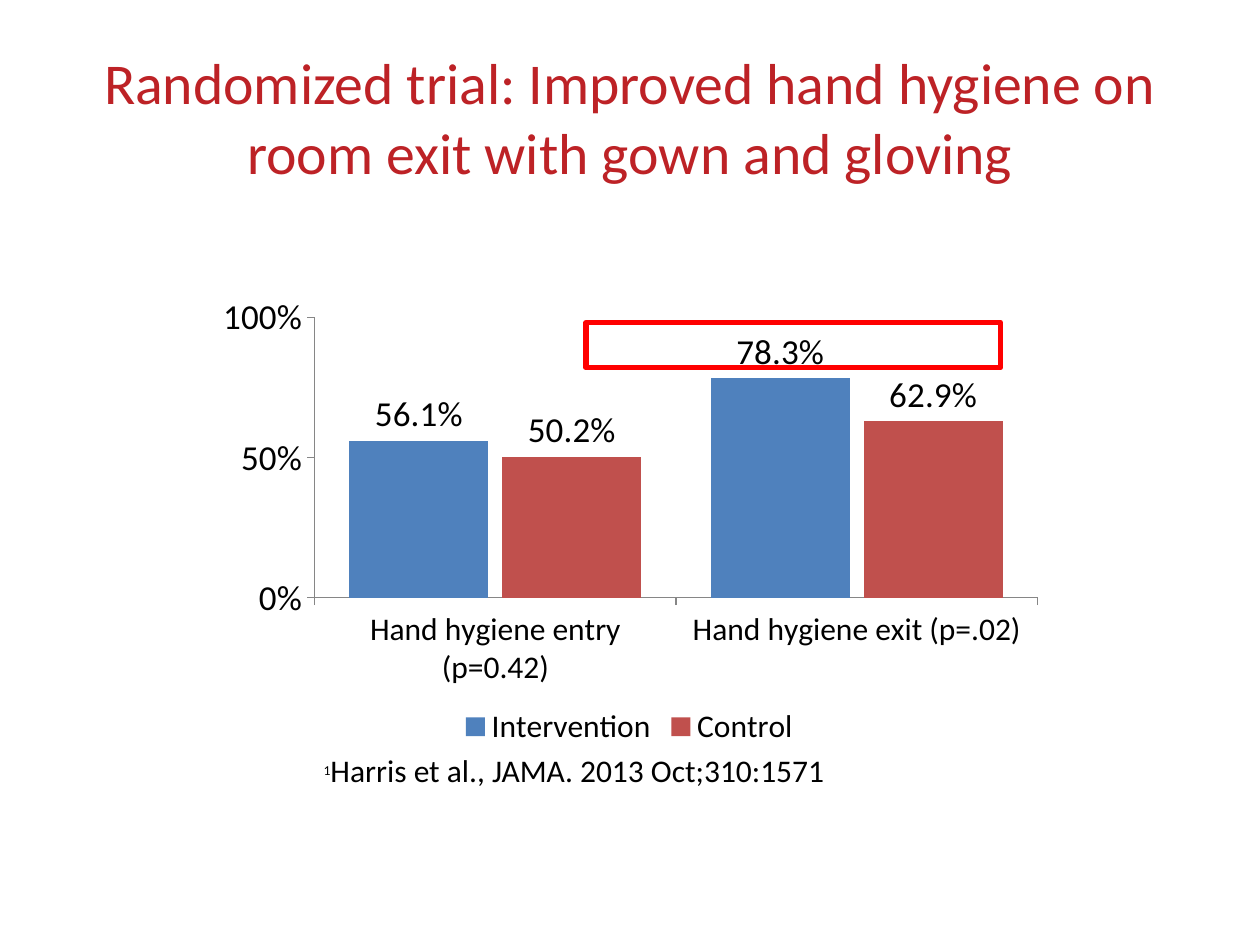
from dataclasses import dataclass

from lxml.etree import SubElement
from pptx import Presentation
from pptx.chart.data import CategoryChartData
from pptx.dml.color import RGBColor
from pptx.enum.chart import XL_CHART_TYPE as ChartType
from pptx.enum.chart import XL_LABEL_POSITION as LabelPosition
from pptx.enum.chart import XL_LEGEND_POSITION as LegendPosition
from pptx.enum.chart import XL_TICK_MARK as TickMark
from pptx.enum.shapes import MSO_SHAPE as ShapeKind
from pptx.enum.text import MSO_ANCHOR as Anchor
from pptx.enum.text import MSO_AUTO_SIZE as AutoSize
from pptx.enum.text import PP_ALIGN as Align
from pptx.oxml.ns import qn
from pptx.util import Inches, Pt

SLIDE_WIDTH, SLIDE_HEIGHT = Inches(10), Inches(7.5)
FONT = "Calibri"
BLACK, AXIS_GRAY = "000000", "868686"


@dataclass(frozen=True)
class Box:
    left: float
    top: float
    width: float
    height: float

    def lengths(self) -> tuple:
        return (
            int(self.left * SLIDE_WIDTH),
            int(self.top * SLIDE_HEIGHT),
            int(self.width * SLIDE_WIDTH),
            int(self.height * SLIDE_HEIGHT),
        )


@dataclass(frozen=True)
class Arm:
    name: str
    rates: tuple
    color: str


TITLE_BOX = Box(0.05, 0.04, 0.9, 1.25 / 7.5)
CHART_BOX = Box(0.162, 2.26 / 7.5, 0.675, 3.71 / 7.5)
HIGHLIGHT_BOX = Box(0.465, 2.56 / 7.5, 0.329, 0.36 / 7.5)
CITATION_BOX = Box(0.247, 5.97 / 7.5, 0.506, 0.34 / 7.5)
PLOT_SHARES = {"x": 0.13, "y": 0.07, "w": 0.85, "h": 0.6}

OUTCOMES = ("Hand hygiene entry (p=0.42)", "Hand hygiene exit (p=.02)")
ARMS = (
    Arm("Intervention", (0.561, 0.783), "4F81BD"),
    Arm("Control", (0.502, 0.629), "C0504D"),
)


def rgb(color: str) -> RGBColor:
    return RGBColor.from_string(color)


def style_font(font, size: float, color: str = BLACK) -> None:
    font.name = FONT
    font.size = Pt(size)
    font.color.rgb = rgb(color)


def add_run(paragraph, text: str, size: float, color: str = BLACK):
    run = paragraph.add_run()
    run.text = text
    style_font(run.font, size, color)
    return run


def place(shape, box: Box) -> None:
    shape.left, shape.top, shape.width, shape.height = box.lengths()


def fill_title(slide) -> None:
    title = slide.shapes.title
    place(title, TITLE_BOX)
    frame = title.text_frame
    frame.auto_size = AutoSize.NONE
    frame.vertical_anchor = Anchor.MIDDLE
    paragraph = frame.paragraphs[0]
    paragraph.alignment = Align.CENTER
    add_run(
        paragraph,
        "Randomized trial: Improved hand hygiene on room exit with gown and gloving",
        33,
        "BD2226",
    )


def fix_plot_area(chart) -> None:
    plot_area = chart.plots[0]._element.getparent()
    for old_layout in plot_area.findall(qn("c:layout")):
        plot_area.remove(old_layout)
    layout = SubElement(plot_area, qn("c:layout"))
    plot_area.insert(0, layout)
    manual = SubElement(layout, qn("c:manualLayout"))
    settings = {"layoutTarget": "inner", "xMode": "edge", "yMode": "edge", **PLOT_SHARES}
    for tag, value in settings.items():
        SubElement(manual, qn(f"c:{tag}")).set("val", str(value))


def style_axis(axis, size: float) -> None:
    axis.has_major_gridlines = False
    axis.major_tick_mark = TickMark.OUTSIDE
    axis.minor_tick_mark = TickMark.NONE
    axis.format.line.color.rgb = rgb(AXIS_GRAY)
    axis.format.line.width = Pt(0.75)
    style_font(axis.tick_labels.font, size)


def style_series(series, arm: Arm) -> None:
    series.smooth = False if hasattr(series, "smooth") else None
    series.format.fill.solid()
    series.format.fill.fore_color.rgb = rgb(arm.color)
    labels = series.data_labels
    labels.show_value = True
    labels.number_format = "0.0%"
    labels.number_format_is_linked = False
    labels.position = LabelPosition.OUTSIDE_END
    style_font(labels.font, 20)


def add_hygiene_chart(slide) -> None:
    data = CategoryChartData(number_format="0.0%")
    data.categories = OUTCOMES
    for arm in ARMS:
        data.add_series(arm.name, arm.rates)
    chart = slide.shapes.add_chart(
        ChartType.COLUMN_CLUSTERED, *CHART_BOX.lengths(), data
    ).chart
    style_font(chart.font, 18)
    chart.has_title = False
    chart.has_legend = True
    chart.legend.position = LegendPosition.BOTTOM
    chart.legend.include_in_layout = False
    style_font(chart.legend.font, 18)
    style_axis(chart.category_axis, 18)
    rate_axis = chart.value_axis
    style_axis(rate_axis, 20)
    rate_axis.minimum_scale, rate_axis.maximum_scale = 0, 1
    rate_axis.major_unit = 0.5
    rate_axis.tick_labels.number_format = "0%"
    rate_axis.tick_labels.number_format_is_linked = False
    plot = chart.plots[0]
    plot.vary_by_categories = False
    plot.gap_width, plot.overlap = 50, -10
    for series, arm in zip(plot.series, ARMS):
        style_series(series, arm)
    fix_plot_area(chart)


def add_highlight(slide) -> None:
    highlight = slide.shapes.add_shape(ShapeKind.RECTANGLE, *HIGHLIGHT_BOX.lengths())
    highlight.shadow.inherit = False
    highlight.fill.background()
    highlight.line.color.rgb = rgb("FF0000")
    highlight.line.width = Pt(3)


def add_citation(slide) -> None:
    frame = slide.shapes.add_textbox(*CITATION_BOX.lengths()).text_frame
    frame.word_wrap = True
    frame.auto_size = AutoSize.SHAPE_TO_FIT_TEXT
    paragraph = frame.paragraphs[0]
    paragraph.line_spacing = 0.8
    marker = add_run(paragraph, "1", 13.5)
    marker.font._element.set("baseline", "30000")
    add_run(paragraph, "Harris et al., JAMA. 2013 Oct;310:1571", 18)


def main() -> None:
    presentation = Presentation()
    presentation.slide_width, presentation.slide_height = SLIDE_WIDTH, SLIDE_HEIGHT
    slide = presentation.slides.add_slide(presentation.slide_layouts[5])
    fill_title(slide)
    add_hygiene_chart(slide)
    add_highlight(slide)
    add_citation(slide)
    presentation.save("out.pptx")


if __name__ == "__main__":
    main()
